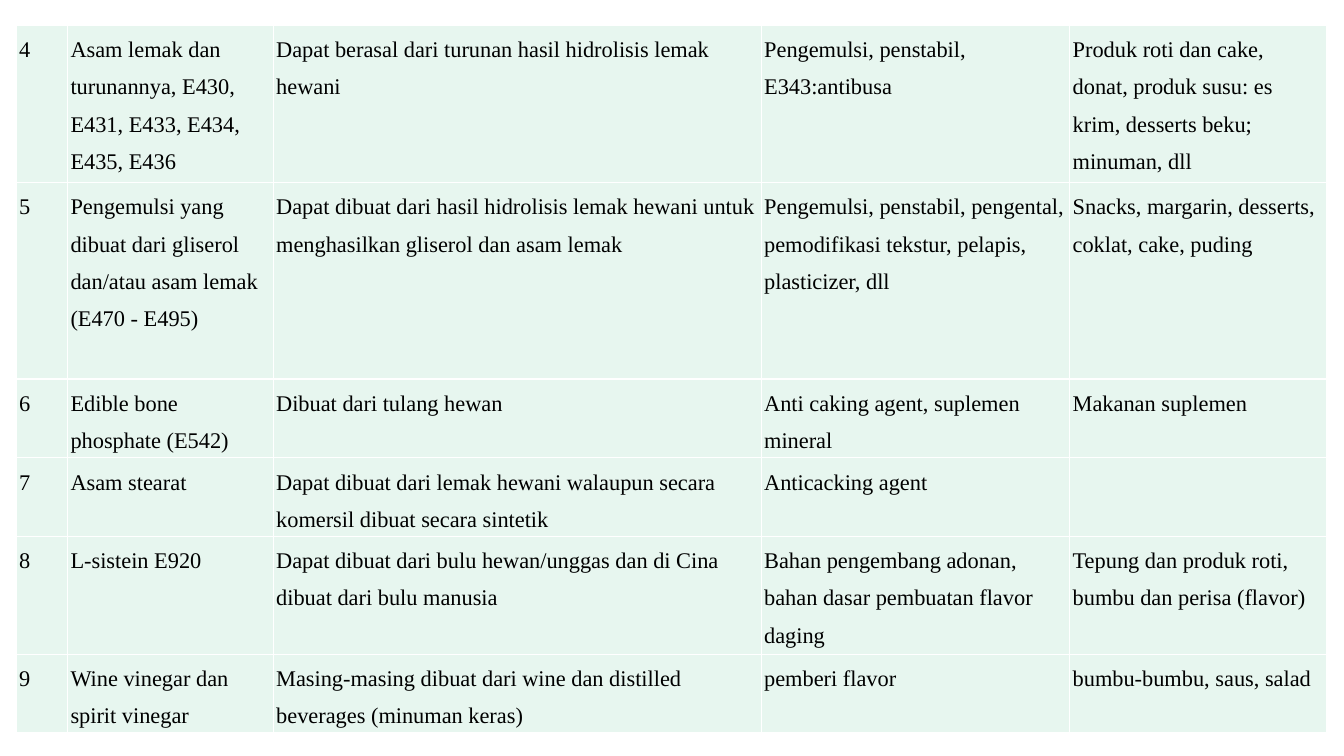
from lxml.etree import SubElement
from pptx import Presentation
from pptx.dml.color import RGBColor as Rgb
from pptx.oxml.ns import qn
from pptx.util import Inches, Pt

COLORS = {"mint": "E7F6EF", "rule": "FFFFFF", "ink": "000000"}
FONT = "Times New Roman"
LINE_HEIGHT = 0.39
COLUMN_WIDTHS = [0.51, 2.04, 4.84, 3.06, 2.55]

ADDITIVES = [
    (4, ["4", "Asam lemak dan turunannya, E430, E431, E433, E434, E435, E436",
         "Dapat berasal dari turunan hasil hidrolisis lemak hewani",
         "Pengemulsi, penstabil, E343:antibusa",
         "Produk roti dan cake, donat, produk susu: es krim, desserts beku; minuman, dll"]),
    (5, ["5", "Pengemulsi yang dibuat dari gliserol dan/atau asam lemak (E470 - E495)",
         "Dapat dibuat dari hasil hidrolisis lemak hewani untuk menghasilkan gliserol dan asam lemak",
         "Pengemulsi, penstabil, pengental, pemodifikasi tekstur, pelapis, plasticizer, dll",
         "Snacks, margarin, desserts, coklat, cake, puding"]),
    (2, ["6", "Edible bone phosphate (E542)",
         "Dibuat dari tulang hewan",
         "Anti caking agent, suplemen mineral",
         "Makanan suplemen"]),
    (2, ["7", "Asam stearat",
         "Dapat dibuat dari lemak hewani walaupun secara komersil dibuat secara sintetik",
         "Anticacking agent",
         ""]),
    (3, ["8", "L-sistein E920",
         "Dapat dibuat dari bulu hewan/unggas dan di Cina dibuat dari bulu manusia",
         "Bahan pengembang adonan, bahan dasar pembuatan flavor daging",
         "Tepung dan produk roti, bumbu dan perisa (flavor)"]),
    (2, ["9", "Wine vinegar dan spirit vinegar",
         "Masing-masing dibuat dari wine dan distilled beverages (minuman keras)",
         "pemberi flavor",
         "bumbu-bumbu, saus, salad"]),
]


def draw_borders(cell):
    properties = cell._tc.get_or_add_tcPr()
    for side in ("lnL", "lnR", "lnT", "lnB"):
        border = SubElement(properties, qn(f"a:{side}"), w=str(Pt(1)))
        paint = SubElement(border, qn("a:solidFill"))
        SubElement(paint, qn("a:srgbClr"), val=COLORS["rule"])


def fill_cell(cell, wording):
    draw_borders(cell)
    cell.fill.solid()
    cell.fill.fore_color.rgb = Rgb.from_string(COLORS["mint"])
    cell.margin_left = cell.margin_right = Inches(0.03)
    cell.margin_top = cell.margin_bottom = 0
    if not wording:
        return
    paragraph = cell.text_frame.paragraphs[0]
    paragraph.line_spacing = 1.5
    run = paragraph.add_run()
    run.text = wording
    run.font.name = FONT
    run.font.size = Pt(16)
    run.font.color.rgb = Rgb.from_string(COLORS["ink"])


def add_additive_table(slide):
    line_total = sum(lines for lines, _ in ADDITIVES)
    table = slide.shapes.add_table(
        len(ADDITIVES), len(COLUMN_WIDTHS), Inches(0.16), Inches(0.25),
        Inches(sum(COLUMN_WIDTHS)), Inches(line_total * LINE_HEIGHT)).table
    table.first_row = table.horz_banding = False
    for column, width in zip(table.columns, COLUMN_WIDTHS):
        column.width = Inches(width)
    for row, (lines, wordings) in zip(table.rows, ADDITIVES):
        row.height = Inches(lines * LINE_HEIGHT)
        for cell, wording in zip(row.cells, wordings):
            fill_cell(cell, wording)


def main():
    deck = Presentation()
    deck.slide_width, deck.slide_height = Inches(13.33), Inches(7.5)
    slide = deck.slides.add_slide(deck.slide_layouts[6])
    add_additive_table(slide)
    deck.save("out.pptx")


if __name__ == "__main__":
    main()
